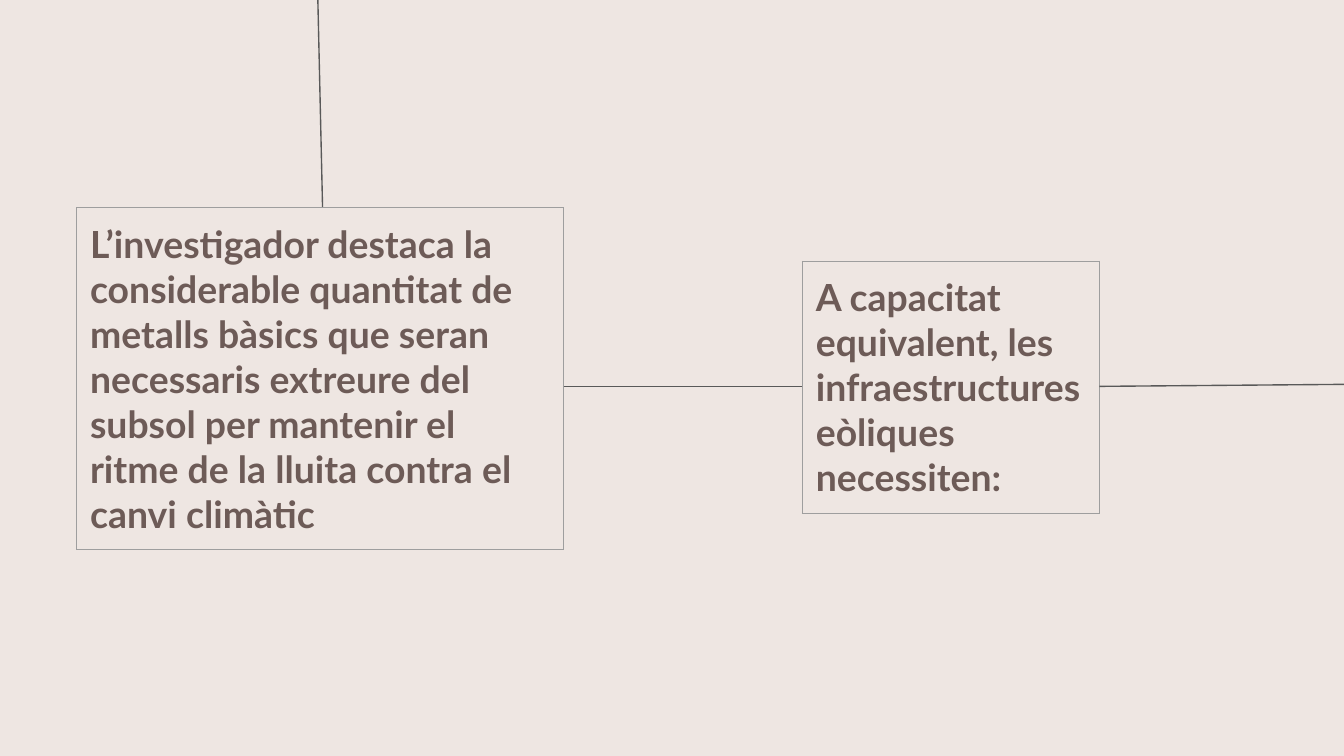
from lxml import etree
from pptx import Presentation
from pptx.dml.color import RGBColor
from pptx.enum.shapes import MSO_CONNECTOR
from pptx.oxml.ns import qn
from pptx.util import Inches, Pt

STRAIGHT = MSO_CONNECTOR.STRAIGHT
CREAM = RGBColor(0xEE, 0xE6, 0xE2)
BROWN = RGBColor(0x6D, 0x5B, 0x57)
GREY = RGBColor(0x59, 0x59, 0x59)
EDGE = RGBColor(0x9E, 0x9E, 0x9E)

WIDE = 10
HIGH = WIDE * 9 / 16
COLS = 100
UNIT = Inches(WIDE) / COLS  # square grid cell, 0.1 inch
THIN = Pt(0.75)
FONT = {"name": "Lato", "size": Pt(20), "bold": True}
PADS = ("margin_left", "margin_right", "margin_top", "margin_bottom")

CLAIM = ("L’investigador destaca la considerable quantitat de metalls bàsics "
         "que seran necessaris extreure del subsol per mantenir el ritme de "
         "la lluita contra el canvi climàtic")
NEED = "A capacitat equivalent, les infraestructures eòliques necessiten:"


def grid(*cells):
    """Turn grid columns and rows into slide lengths."""
    return [round(cell * UNIT) for cell in cells]


def add_edges(cell):
    props = cell._tc.get_or_add_tcPr()
    for side in "LRTB":
        edge = etree.SubElement(props, qn(f"a:ln{side}"), w=str(THIN))
        fill = etree.SubElement(edge, qn("a:solidFill"))
        etree.SubElement(fill, qn("a:srgbClr"), val=str(EDGE))


def add_card(slide, text, left, top, width, height):
    """Add a one-cell table with a thin frame."""
    table = slide.shapes.add_table(1, 1, *grid(left, top, width, height)).table
    table.first_row = table.horz_banding = False
    cell = table.cell(0, 0)
    add_edges(cell)
    cell.fill.background()
    for pad in PADS:
        setattr(cell, pad, Inches(0.1))
    run = cell.text_frame.paragraphs[0].add_run()
    run.text = text
    for key, value in FONT.items():
        setattr(run.font, key, value)
    run.font.color.rgb = BROWN


def add_link(slide, *ends):
    link = slide.shapes.add_connector(STRAIGHT, *grid(*ends))
    link.line.color.rgb = GREY
    link.line.width = THIN
    etree.SubElement(link._element.spPr, qn("a:effectLst"))


def main():
    deck = Presentation()
    deck.slide_width, deck.slide_height = Inches(WIDE), Inches(HIGH)
    slide = deck.slides.add_slide(deck.slide_layouts[6])
    slide.background.fill.solid()
    slide.background.fill.fore_color.rgb = CREAM

    claim = (5.7, 15.45, 36.25, 25.4)
    need = (59.7, 19.45, 22.1, 18.75)
    mid = 28.75
    add_link(slide, 23.65, 0, 24, claim[1])
    add_card(slide, CLAIM, *claim)
    add_link(slide, claim[0] + claim[2], mid, need[0], mid)
    add_card(slide, NEED, *need)
    add_link(slide, need[0] + need[2], mid, COLS, mid - 0.15)
    deck.save("out.pptx")


if __name__ == "__main__":
    main()
